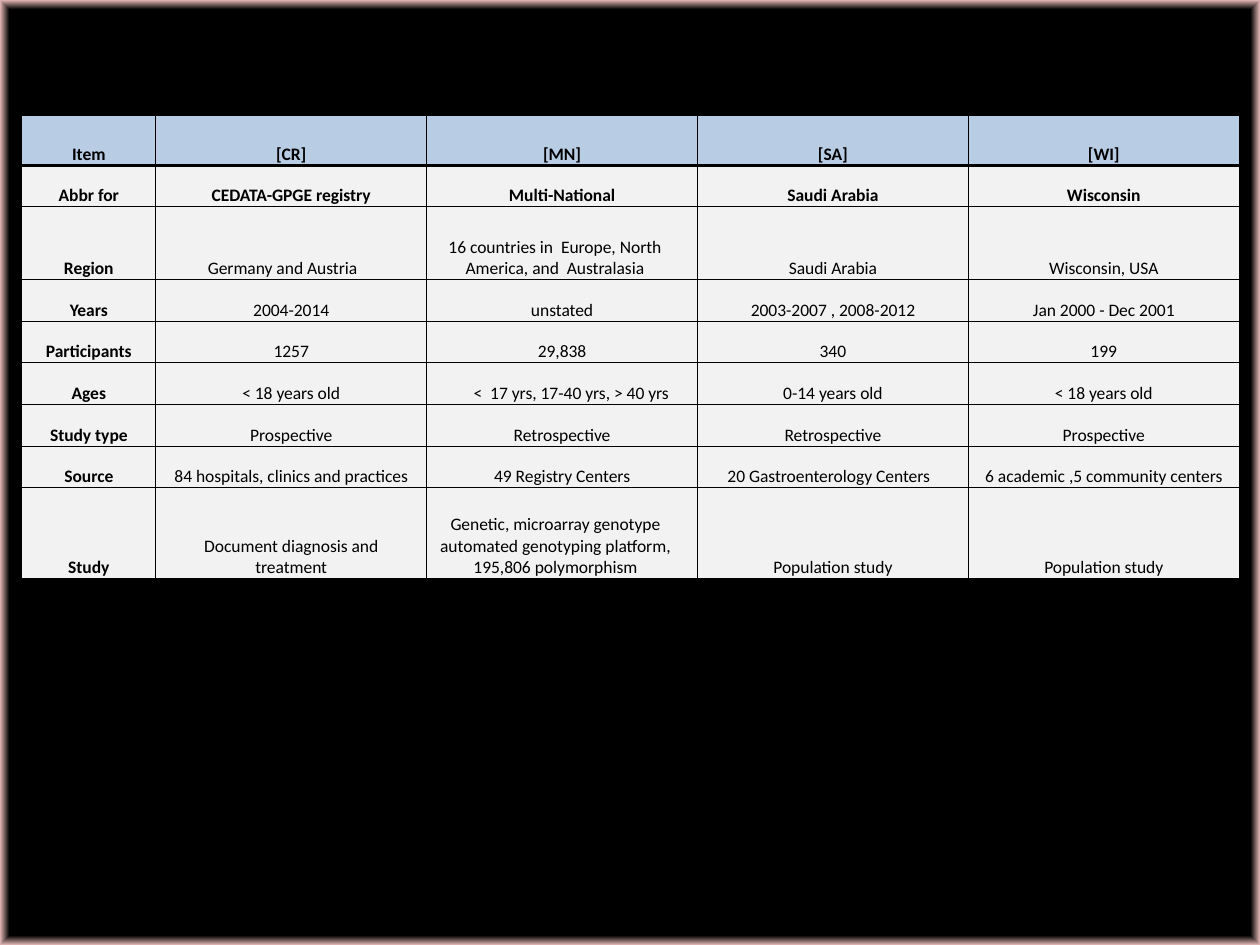
from dataclasses import dataclass

from lxml.etree import SubElement
from pptx import Presentation
from pptx.dml.color import RGBColor
from pptx.enum.text import MSO_ANCHOR, PP_ALIGN
from pptx.oxml.ns import qn
from pptx.util import Cm, Pt


@dataclass(frozen=True)
class Theme:
    """Colours, type and line weights of the slide."""
    font: str = "Calibri"
    size: float = 10
    ink: str = "000000"
    glow: str = "E6B9B8"
    header: str = "B8CCE4"
    body: str = "F2F2F2"
    thin: float = 0.5
    thick: float = 2


THEME = Theme()
STUDIES = [
    ["Item", "[CR]", "[MN]", "[SA]", "[WI]"],
    ["Abbr for", "CEDATA-GPGE registry", "Multi-National", "Saudi Arabia", "Wisconsin"],
    ["Region", "Germany and Austria",
     "16 countries in  Europe, North\nAmerica, and  Australasia",
     "Saudi Arabia", "Wisconsin, USA"],
    ["Years", "2004-2014", "unstated", "2003-2007 , 2008-2012", "Jan 2000 - Dec 2001"],
    ["Participants", "1257", "29,838", "340", "199"],
    ["Ages", "< 18 years old", "<  17 yrs, 17-40 yrs, > 40 yrs",
     "0-14 years old", "< 18 years old"],
    ["Study type", "Prospective", "Retrospective", "Retrospective", "Prospective"],
    ["Source", "84 hospitals, clinics and practices", "49 Registry Centers",
     "20 Gastroenterology Centers", "6 academic ,5 community centers"],
    ["Study", "Document diagnosis and\ntreatment",
     "Genetic, microarray genotype\nautomated genotyping platform,\n195,806 polymorphism",
     "Population study", "Population study"],
]
COLUMN_WIDTHS = [2.7] + [5.46] * 4
ROW_HEIGHTS = [1, 0.83, 1.47] + [0.84] * 5 + [1.82]
INSET = 0.03
LEFT_INSETS = {(5, 2): 0.4}
RIGHT_INSETS = {(2, 1): 0.38, (2, 2): 0.32, (7, 3): 0.2, (8, 2): 0.3}


def paint_background(slide):
    """Fill the slide with black that glows along its edges."""
    fill = slide.background.fill
    fill.gradient()
    for stop, position, color in zip(
            fill.gradient_stops, (0.98, 1), (THEME.ink, THEME.glow)):
        stop.position = position
        stop.color.rgb = RGBColor.from_string(color)
    gradient = next(slide.element.iter(qn("a:gradFill")))
    gradient.remove(gradient.find(qn("a:lin")))
    shade = SubElement(gradient, qn("a:path"), {"path": "shape"})
    SubElement(shade, qn("a:fillToRect"), dict.fromkeys("ltrb", "50000"))


def draw_borders(cell, row):
    """Rule all four sides, heavier between the header and the body."""
    weights = {
        "L": THEME.thin,
        "R": THEME.thin,
        "T": THEME.thick if row == 1 else THEME.thin,
        "B": THEME.thick if row == 0 else THEME.thin,
    }
    properties = cell._tc.get_or_add_tcPr()
    for side, weight in weights.items():
        line = SubElement(properties, qn(f"a:ln{side}"), {"w": str(Pt(weight))})
        color = SubElement(line, qn("a:solidFill"))
        SubElement(color, qn("a:srgbClr"), {"val": THEME.ink})


def fill_cell(cell, text, row, column):
    """Write and format one table cell."""
    draw_borders(cell, row)
    cell.fill.solid()
    cell.fill.fore_color.rgb = RGBColor.from_string(
        THEME.header if row == 0 else THEME.body)
    cell.vertical_anchor = MSO_ANCHOR.BOTTOM
    cell.margin_left = Cm(LEFT_INSETS.get((row, column), INSET))
    cell.margin_right = Cm(RIGHT_INSETS.get((row, column), INSET))
    cell.margin_top, cell.margin_bottom = Cm(INSET), 0
    cell.text_frame.text = text
    for paragraph in cell.text_frame.paragraphs:
        paragraph.alignment = PP_ALIGN.CENTER
        for run in paragraph.runs:
            run.font.name = THEME.font
            run.font.size = Pt(THEME.size)
            run.font.bold = row < 2 or column == 0
            run.font.color.rgb = RGBColor.from_string(THEME.ink)


def add_study_table(slide):
    """Add the comparison of the four studies."""
    table = slide.shapes.add_table(
        len(STUDIES), len(COLUMN_WIDTHS), Cm(0.44), Cm(2.33),
        Cm(sum(COLUMN_WIDTHS)), Cm(sum(ROW_HEIGHTS))).table
    table.first_row = table.horz_banding = False
    for column, width in zip(table.columns, COLUMN_WIDTHS):
        column.width = Cm(width)
    for row, height in zip(table.rows, ROW_HEIGHTS):
        row.height = Cm(height)
    for row, entries in enumerate(STUDIES):
        for column, text in enumerate(entries):
            fill_cell(table.cell(row, column), text, row, column)


def main():
    """Build the slide and save it."""
    presentation = Presentation()
    presentation.slide_width, presentation.slide_height = Cm(25.4), Cm(19.05)
    slide = presentation.slides.add_slide(presentation.slide_layouts[6])
    paint_background(slide)
    add_study_table(slide)
    presentation.save("out.pptx")


if __name__ == "__main__":
    main()
